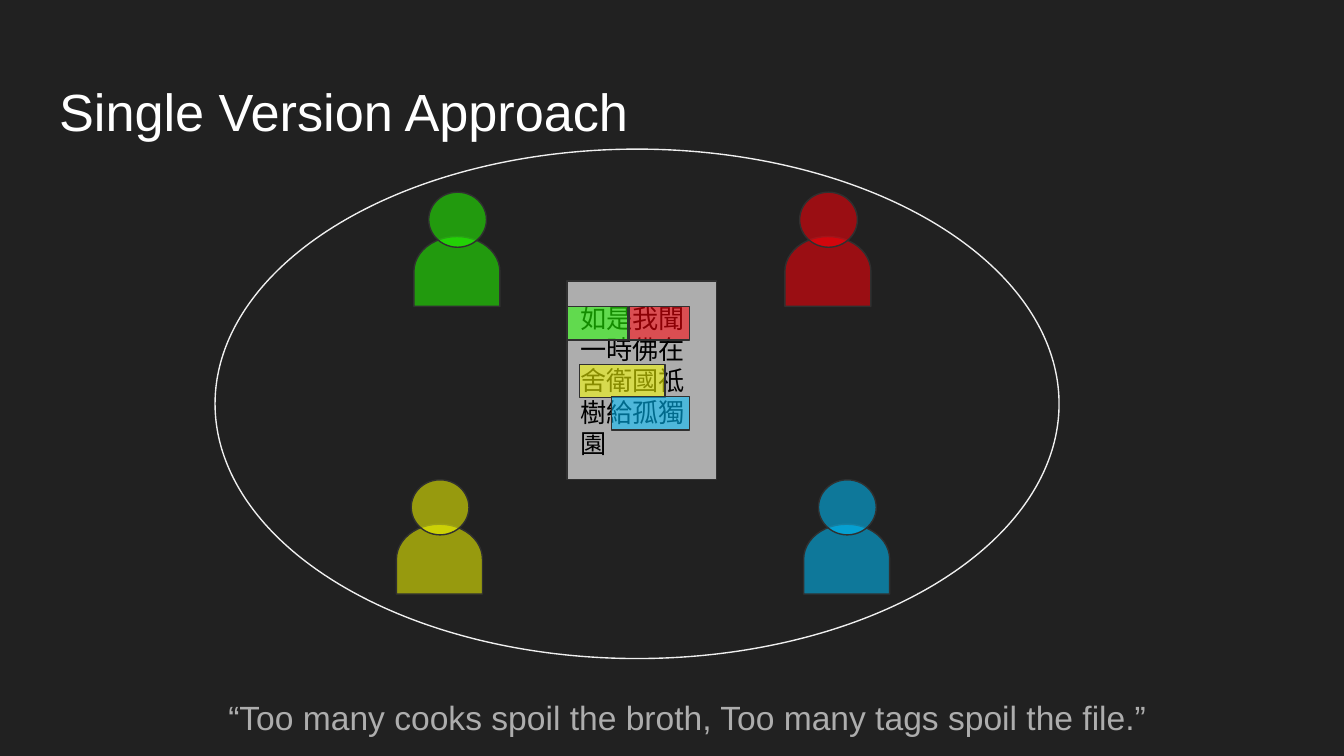
"""Build the slide on the single version approach to shared tagging."""
from dataclasses import dataclass

from lxml.etree import SubElement
from pptx import Presentation
from pptx.dml.color import RGBColor
from pptx.enum.shapes import MSO_SHAPE
from pptx.enum.text import MSO_ANCHOR, PP_ALIGN
from pptx.oxml.ns import qn
from pptx.util import Inches, Pt

COLORS = {
    "background": "212121",
    "title": "FFFFFF",
    "gray": "ADADAD",
    "text": "000000",
    "outline": "303030",
    "ring": "EFEFEF",
    "blue": "00C1FF",
    "yellow": "F8FF00",
    "red": "FF0009",
    "green": "24FF00",
}
FONT = "Arial"
TAG_HEIGHT = 0.25
TAG_OPACITY = 55


@dataclass(frozen=True)
class Editor:
    color: str
    left: float
    top: float


@dataclass(frozen=True)
class Tag:
    color: str
    left: float
    top: float
    width: float


EDITORS = [
    Editor("blue", 6.04, 3.57),
    Editor("yellow", 3.01, 3.57),
    Editor("red", 5.9, 1.43),
    Editor("green", 3.14, 1.43),
]
TAGS = [
    Tag("yellow", 4.31, 2.71, 0.64),
    Tag("red", 4.68, 2.28, 0.45),
    Tag("blue", 4.55, 2.95, 0.58),
    Tag("green", 4.22, 2.28, 0.45),
]


def rgb(name: str) -> RGBColor:
    return RGBColor.from_string(COLORS[name])


def write(shape, text: str, *, size: float, color: str, anchor=MSO_ANCHOR.TOP,
          line_spacing: float = 1.0, space_after: float = 0) -> None:
    frame = shape.text_frame
    frame.word_wrap = True
    frame.vertical_anchor = anchor
    frame.margin_left = frame.margin_right = Inches(0.1)
    frame.margin_top = frame.margin_bottom = Inches(0.1)
    paragraph = frame.paragraphs[0]
    paragraph.alignment = PP_ALIGN.LEFT
    paragraph.line_spacing = line_spacing
    paragraph.space_before = Pt(0)
    paragraph.space_after = Pt(space_after)
    run = paragraph.add_run()
    run.text = text
    run.font.name = FONT
    run.font.size = Pt(size)
    run.font.color.rgb = rgb(color)


def add_figure(shapes, kind: MSO_SHAPE, left: float, top: float, width: float, height: float, *,
               fill: str | None = None, line: str = "outline", opacity: int = 100):
    shape = shapes.add_shape(kind, Inches(left), Inches(top), Inches(width), Inches(height))
    shape.shadow.inherit = False
    shape.line.color.rgb = rgb(line)
    shape.line.width = Pt(0.75)
    if fill is None:
        shape.fill.background()
        return shape
    shape.fill.solid()
    shape.fill.fore_color.rgb = rgb(fill)
    if opacity < 100:
        color = shape._element.spPr.find(qn("a:solidFill")).find(qn("a:srgbClr"))
        SubElement(color, qn("a:alpha"), val=str(opacity * 1000))
    return shape


def add_editor(slide, editor: Editor) -> None:
    group = slide.shapes.add_group_shape()
    style = {"fill": editor.color, "opacity": TAG_OPACITY}
    body = add_figure(group.shapes, MSO_SHAPE.FLOWCHART_DELAY,
                      editor.left, editor.top + 0.27, 0.52, 0.64, **style)
    body.rotation = 270
    add_figure(group.shapes, MSO_SHAPE.OVAL, editor.left + 0.05, editor.top, 0.43, 0.41, **style)


def add_tag(slide, tag: Tag) -> None:
    add_figure(slide.shapes, MSO_SHAPE.RECTANGLE, tag.left, tag.top, tag.width, TAG_HEIGHT,
               fill=tag.color, opacity=TAG_OPACITY)


def main() -> None:
    presentation = Presentation()
    presentation.slide_width = Inches(10)
    presentation.slide_height = Inches(10 * 9 / 16)
    slide = presentation.slides.add_slide(presentation.slide_layouts[5])
    slide.background.fill.solid()
    slide.background.fill.fore_color.rgb = rgb("background")

    title = slide.shapes.title
    title.left, title.top = Inches(0.34), Inches(0.49)
    title.width, title.height = Inches(9.32), Inches(0.63)
    write(title, "Single Version Approach", size=28, color="title")

    document = add_figure(slide.shapes, MSO_SHAPE.FLOWCHART_PROCESS, 4.22, 2.09, 1.11, 1.48,
                          fill="gray")
    write(document, "如是我聞一時佛在舍衛國祗樹給孤獨園", size=14, color="text",
          anchor=MSO_ANCHOR.MIDDLE)

    for editor in EDITORS:
        add_editor(slide, editor)
    for tag in TAGS:
        add_tag(slide, tag)

    quote = slide.shapes.add_textbox(Inches(1.6), Inches(5.04), Inches(7.21), Inches(0.63))
    write(quote, "“Too many cooks spoil the broth, Too many tags spoil the file.”",
          size=18, color="gray", line_spacing=1.15, space_after=16)
    add_figure(slide.shapes, MSO_SHAPE.OVAL, 1.6, 1.11, 6.28, 3.79, line="ring")

    presentation.save("out.pptx")


if __name__ == "__main__":
    main()
